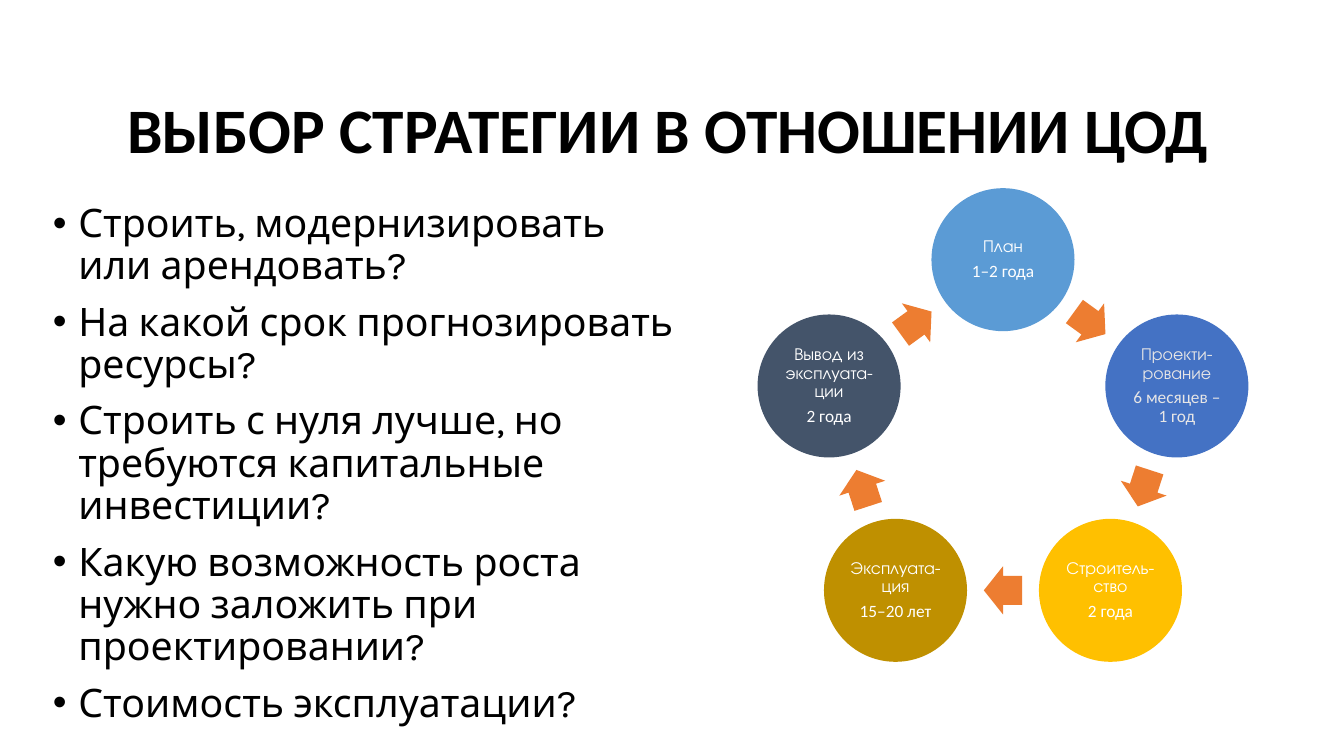
from math import cos, pi, radians, sin

from lxml.etree import SubElement
from pptx import Presentation
from pptx.dml.color import RGBColor
from pptx.enum.shapes import MSO_SHAPE
from pptx.enum.text import MSO_ANCHOR, PP_ALIGN
from pptx.oxml.ns import qn
from pptx.util import Cm, Pt

TITLE = "ВЫБОР СТРАТЕГИИ В ОТНОШЕНИИ ЦОД"
QUESTIONS = [
    "Строить, модернизировать или арендовать?",
    "На какой срок прогнозировать ресурсы?",
    "Строить с нуля лучше, но требуются капитальные инвестиции?",
    "Какую возможность роста нужно заложить при проектировании?",
    "Стоимость эксплуатации?",
]
# Stage, duration, fill, text colour; clockwise from the top
STAGES = [
    ("План", "1–2 года", "sky", "white"),
    ("Проекти-рование", "6 месяцев –\v1 год", "blue", "grey"),
    ("Строитель-ство", "2 года", "gold", "white"),
    ("Эксплуата-ция", "15–20 лет", "ochre", "white"),
    ("Вывод из эксплуата-ции", "2 года", "slate", "white"),
]
COLORS = {
    "black": "000000", "white": "FFFFFF", "grey": "E7E6E6", "sky": "5B9BD5",
    "blue": "4472C4", "gold": "FFC000", "ochre": "BF9000", "slate": "44546A",
    "orange": "ED7D31",
}
TITLE_FONT = {"name": "Calibri", "size": Pt(88), "bold": True}
QUESTION_FONT = {"name": "Karla", "size": Pt(54.5)}
STAGE_FONT = {"name": "TeX Gyre Adventor", "size": Pt(24)}
DURATION_FONT = {"name": "Calibri", "size": Pt(24)}

CENTER_X, CENTER_Y, RADIUS = 49.15, 21.69, 8.96
CIRCLE = 7.01
ARROW_W, ARROW_H = 1.88, 2.36
STEP = 360 / len(STAGES)


def color(name):
    return RGBColor.from_string(COLORS[name])


def add_text(p, text, font, color_name, **layout):
    p.text = text
    p.line_spacing = 0.9
    for key, value in layout.items():
        setattr(p, key, value)
    for r in p.runs:
        for key, value in font.items():
            setattr(r.font, key, value)
        r.font.color.rgb = color(color_name)


def add_bullet(p):
    pPr = p._p.get_or_add_pPr()
    pPr.set("marL", str(Cm(1.25)))
    pPr.set("indent", str(-Cm(1.25)))
    SubElement(pPr, qn("a:buFont")).set("typeface", "Arial")
    SubElement(pPr, qn("a:buChar")).set("char", "•")


def add_text_box(slide, x, y, w, h, anchor):
    tf = slide.shapes.add_textbox(Cm(x), Cm(y), Cm(w), Cm(h)).text_frame
    tf.word_wrap = True
    tf.vertical_anchor = anchor
    return tf


def add_on_ring(slide, kind, angle, radius, w, h, fill):
    """Centre a shape on a ring; the angle runs clockwise from the top."""
    x = CENTER_X + radius * sin(radians(angle)) - w / 2
    y = CENTER_Y - radius * cos(radians(angle)) - h / 2
    sp = slide.shapes.add_shape(kind, Cm(x), Cm(y), Cm(w), Cm(h))
    sp.shadow.inherit = False
    sp.fill.solid()
    sp.fill.fore_color.rgb = color(fill)
    sp.line.fill.background()
    return sp


def add_stage(slide, angle, stage, duration, fill, text_color):
    sp = add_on_ring(slide, MSO_SHAPE.OVAL, angle, RADIUS, CIRCLE, CIRCLE, fill)
    tf = sp.text_frame
    tf.word_wrap = True
    tf.vertical_anchor = MSO_ANCHOR.MIDDLE
    for side in ("left", "top", "right", "bottom"):
        setattr(tf, f"margin_{side}", Cm(0.08))
    layout = {"alignment": PP_ALIGN.CENTER, "space_after": Pt(8.4)}
    add_text(tf.paragraphs[0], stage, STAGE_FONT, text_color, **layout)
    add_text(tf.add_paragraph(), duration, DURATION_FONT, text_color, **layout)


def add_arrow(slide, angle):
    """Place an arrow halfway between two stages, along the ring."""
    sp = add_on_ring(slide, MSO_SHAPE.RIGHT_ARROW, angle,
                     RADIUS * cos(pi / len(STAGES)), ARROW_W, ARROW_H, "orange")
    sp.adjustments[0] = 0.6
    sp.adjustments[1] = 0.5
    sp.rotation = angle


def main():
    prs = Presentation()
    prs.slide_width, prs.slide_height = Cm(65.86), Cm(37.06)
    slide = prs.slides.add_slide(prs.slide_layouts[6])

    tf = add_text_box(slide, 2.34, 3.91, 60.81, 5.21, MSO_ANCHOR.MIDDLE)
    add_text(tf.paragraphs[0], TITLE, TITLE_FONT, "black",
             alignment=PP_ALIGN.CENTER)

    tf = add_text_box(slide, 2.34, 9.86, 31.6, 23.5, MSO_ANCHOR.TOP)
    for i, question in enumerate(QUESTIONS):
        p = tf.add_paragraph() if i else tf.paragraphs[0]
        add_bullet(p)
        add_text(p, question, QUESTION_FONT, "black",
                 space_before=Pt(19.4 if i else 0))

    for i, stage in enumerate(STAGES):
        add_stage(slide, i * STEP, *stage)
        add_arrow(slide, (i + 0.5) * STEP)

    prs.save("out.pptx")


if __name__ == "__main__":
    main()
